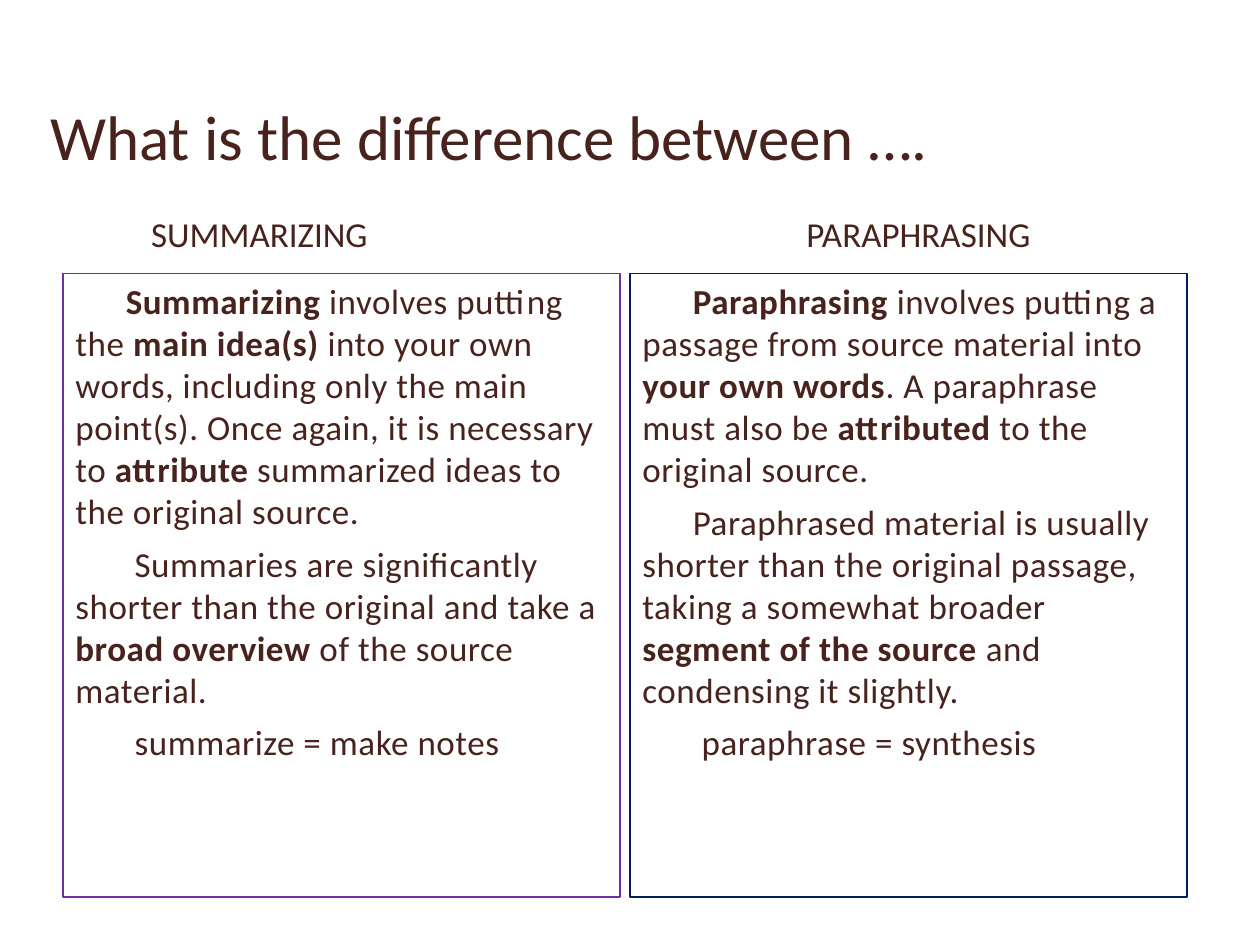
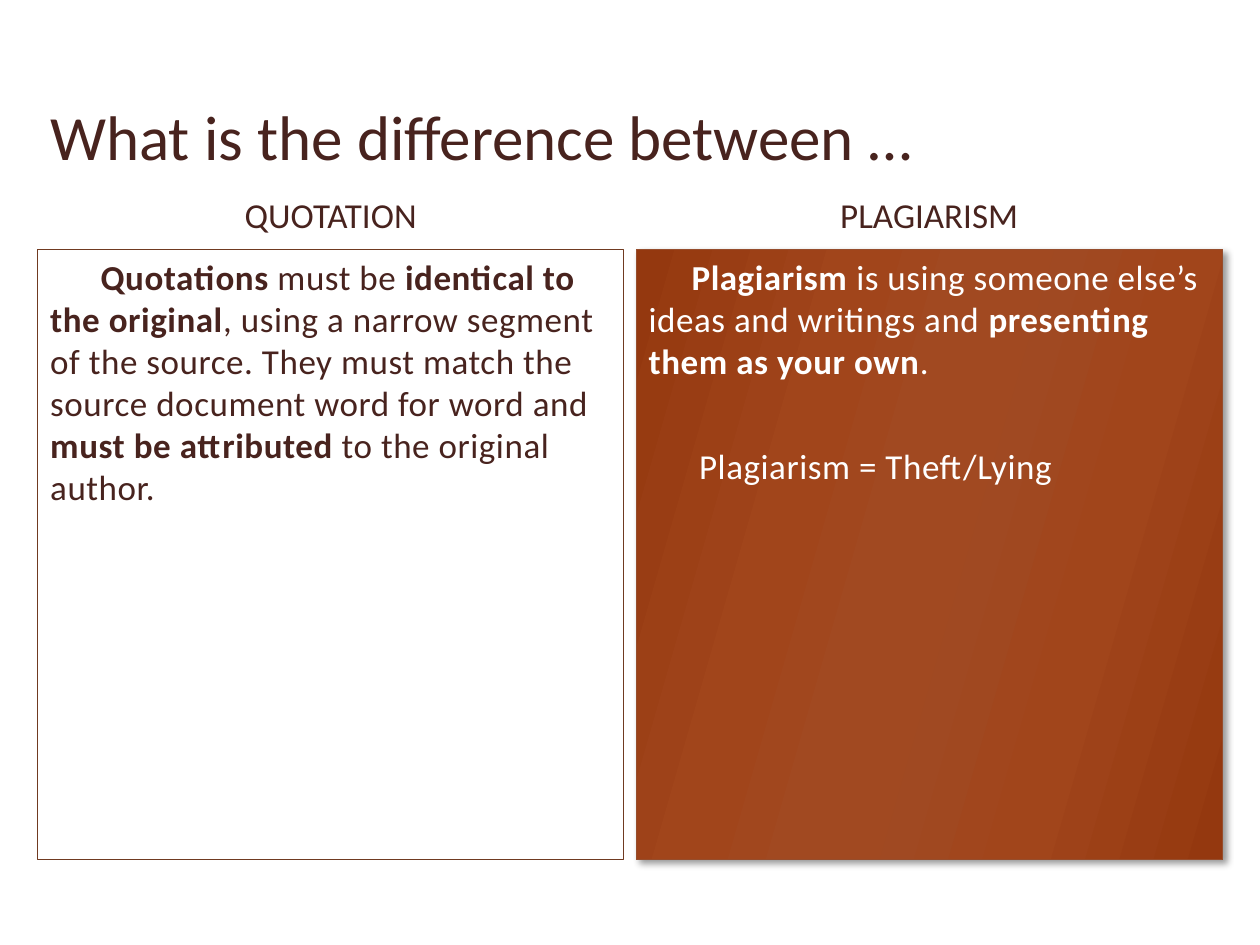
import dataclasses
import pptx
import pptx.util
import pptx.dml.color
import pptx.enum.shapes
import pptx.enum.text
import pptx.oxml
import pptx.oxml.ns

Inches, Pt = pptx.util.Inches, pptx.util.Pt
Anchor = pptx.enum.text.MSO_ANCHOR
Align = pptx.enum.text.PP_ALIGN


@dataclasses.dataclass(frozen=True)
class Theme:
    font: str = "Calibri"
    ink: str = "48231E"
    white: str = "FFFFFF"
    purple: str = "7030A0"
    navy: str = "002060"
    brown: str = "703A21"
    rust: str = "964D2C"
    shade: str = "000000"
    ramp: tuple = ((0, "94380F"), (30, "A1451B"), (45, "A14921"),
                   (55, "A04922"), (73, "A1451B"), (100, "94380F"))
    title: int = 36
    body: int = 20
    gap: int = 6
    track: int = 30
    edge: float = 0.75


@dataclasses.dataclass
class Panel:
    head: str
    line: str
    paras: list
    ink: str = Theme.ink
    glow: bool = False
    inset: float = 0.1


THEME = Theme()
PAD = 0.1


def color(code):
    return pptx.dml.color.RGBColor.from_string(code)


def add_run(para, text, size, ink, bold=False, track=0):
    run = para.add_run()
    run.text = text
    run.font.name = THEME.font
    run.font.size = Pt(size)
    run.font.bold = bold
    run.font.color.rgb = color(ink)
    if track:
        run._r.get_or_add_rPr().set("spc", str(track))


def add_label(slide, box, text, size, anchor, align, gap, right=PAD):
    frame = slide.shapes.add_textbox(*map(Inches, box)).text_frame
    frame.word_wrap = True
    frame.vertical_anchor = anchor
    frame.margin_right = Inches(right)
    para = frame.paragraphs[0]
    para.alignment = align
    para.space_before = Pt(gap)
    add_run(para, text, size, THEME.ink)


def add_glow(shape):
    space = pptx.oxml.ns.nsdecls("a")
    stops = "".join(f'<a:gs pos="{pos * 1000}"><a:srgbClr val="{code}"/></a:gs>'
                    for pos, code in THEME.ramp)
    grad = pptx.oxml.parse_xml(
        f'<a:gradFill {space} rotWithShape="1"><a:gsLst>{stops}</a:gsLst>'
        f'<a:lin ang="{16 * 60000}" scaled="0"/></a:gradFill>')
    props = shape._element.spPr
    props.replace(props.find(pptx.oxml.ns.qn("a:noFill")), grad)
    cast = pptx.oxml.parse_xml(
        f'<a:outerShdw {space} blurRad="{Pt(4)}" dist="{Pt(3)}" '
        f'dir="{45 * 60000}" algn="tl" rotWithShape="0">'
        f'<a:srgbClr val="{THEME.shade}"><a:alpha val="40000"/></a:srgbClr>'
        '</a:outerShdw>')
    props.find(pptx.oxml.ns.qn("a:effectLst")).append(cast)


def add_panel(slide, box, panel):
    shape = slide.shapes.add_shape(
        pptx.enum.shapes.MSO_SHAPE.RECTANGLE, *map(Inches, box))
    shape.shadow.inherit = False
    shape.fill.background()
    shape.line.color.rgb = color(panel.line)
    shape.line.width = Pt(THEME.edge)
    if panel.glow:
        add_glow(shape)
    frame = shape.text_frame
    frame.word_wrap = True
    frame.vertical_anchor = Anchor.TOP
    for num, (indent, gap, text) in enumerate(panel.paras):
        para = frame.add_paragraph() if num else frame.paragraphs[0]
        para.alignment = Align.LEFT
        para.space_before = Pt(gap)
        para._p.get_or_add_pPr().set("indent", str(Inches(indent)))
        for part, words in enumerate(text.split("*")):
            if words:
                add_run(para, words, THEME.body, panel.ink,
                        part % 2 == 1, THEME.track)


def add_slide(deck, title, panels, heads, boxes):
    slide = deck.slides.add_slide(deck.slide_layouts[6])
    add_label(slide, (0.3, 0.25, 9.4, 1.17), title, THEME.title,
              Anchor.BOTTOM, Align.LEFT, 4)
    for panel, head, box in zip(panels, heads, boxes):
        add_panel(slide, box, panel)
        add_label(slide, head, panel.head, THEME.body, Anchor.MIDDLE,
                  Align.CENTER, THEME.gap, panel.inset)


def pair(lefts, top, width, height):
    return [(left, top, width, height) for left in lefts]


def main():
    deck = pptx.Presentation()
    deck.slide_width, deck.slide_height = Inches(10), Inches(7.5)
    gap = THEME.gap
    summary = Panel("SUMMARIZING", THEME.purple, [
        (0.4, gap, "*Summarizing *involves putting the *main idea(s)* into your "
         "own words, including only the main point(s). Once again, it is "
         "necessary to *attribute* summarized ideas to the original source."),
        (0.47, gap, "Summaries are significantly shorter than the original and "
         "take a *broad overview* of the source material."),
        (0.47, gap, "summarize = make notes")], inset=1.4)
    rewrite = Panel("PARAPHRASING", THEME.navy, [
        (0.4, gap, "*Paraphrasing *involves putting a passage from source "
         "material into *your own words*. A paraphrase must also be "
         "*attributed* to the original source."),
        (0.4, gap, "Paraphrased material is usually shorter than the original "
         "passage, taking a somewhat broader *segment of the source *and "
         "condensing it slightly."),
        (0.47, gap, "paraphrase = synthesis")])
    quote = Panel("QUOTATION", THEME.brown, [
        (0.4, gap, "*Quotations *must be *identical to the original*, using a "
         "narrow segment of the source. They must match the source document "
         "word for word and *must be attributed *to the original author.")])
    theft = Panel("PLAGIARISM", THEME.rust, [
        (0.34, gap, "*Plagiarism *is using someone else’s ideas and writings "
         "and *presenting them as your own*."),
        (0.4, 36, "Plagiarism = Theft/Lying")], ink=THEME.white, glow=True)

    add_slide(deck, "What is the difference between ….", (summary, rewrite),
              pair((0.5, 5.08), 1.58, 4.42, 0.55),
              pair((0.5, 5), 2.17, 4.42, 4.95))
    add_slide(deck, "What is the difference between …", (quote, theft),
              pair((0.3, 5.05), 1.42, 4.65, 0.56),
              pair((0.3, 5.05), 1.98, 4.65, 4.84))
    deck.save("out.pptx")


if __name__ == "__main__":
    main()
